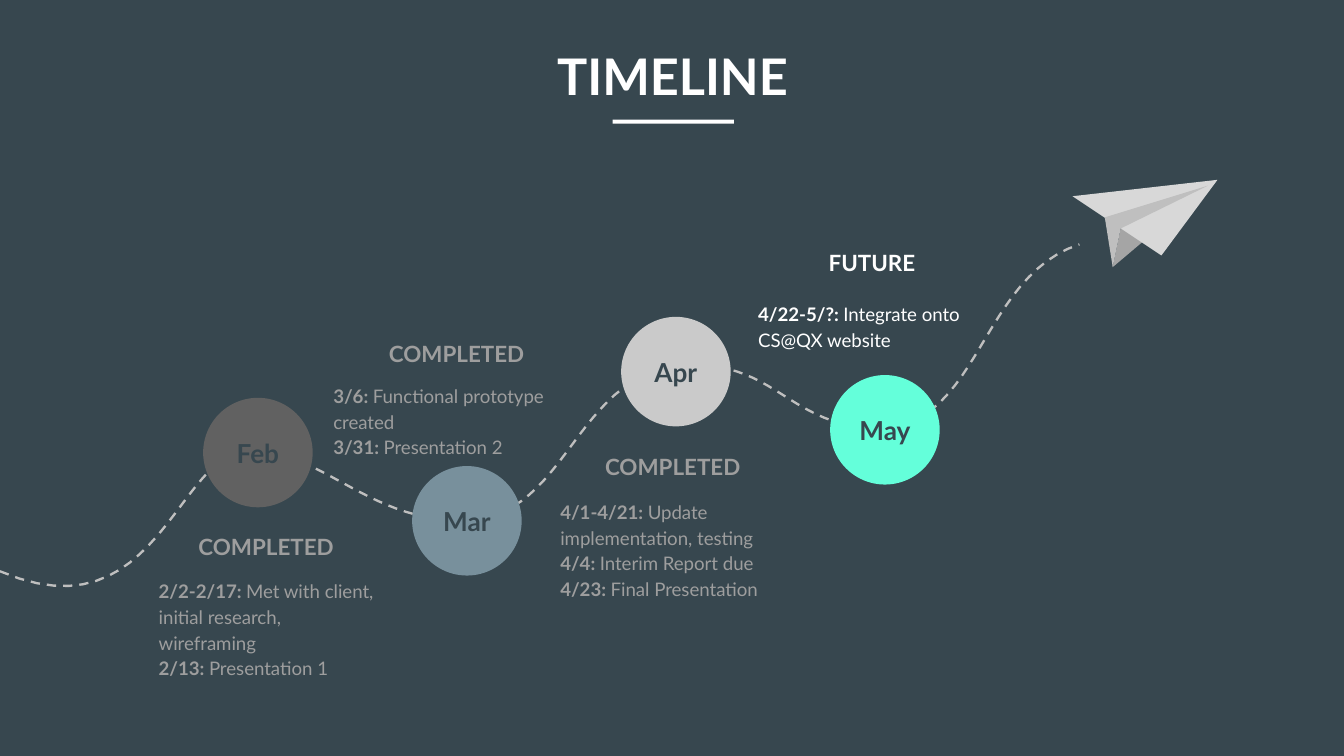
"""Build a dark timeline slide with four monthly milestones and a paper plane."""
from dataclasses import dataclass

import pptx
import pptx.dml.color
import pptx.enum.dml
import pptx.enum.shapes
import pptx.enum.text
import pptx.util

Cm = pptx.util.Cm
Point = tuple[float, float]
Box = tuple[float, float, float, float]

COLORS = {
    "background": "37474F",
    "white": "FFFFFF",
    "muted": "9E9E9E",
    "trail": "BFBFBF",
    "feb": "616161",
    "mar": "78909C",
    "apr": "CACACA",
    "may": "64FFDA",
    "keel": "A5A5A5",
    "wing": "D8D8D8",
    "fold": "BFBFBF",
}
FONT = "Lato"
DIAMETER = 2.07
FIRST_LEFT, STEP = 3.84, 3.95
LABEL_WIDTH, LABEL_HEIGHT, LABEL_DROP = 1.32, 0.69, 0.7
HEADING_HEIGHT = 0.61
CURVE_STEPS = 24
TIGHT_INSETS = (0.1, 0.05)
BODY_INSETS = (0.23, 0.1)

TRAIL_START = (0, 10.8)
TRAIL_CURVES = [
    ((3.02, 12.09), (3.33, 8.48), (4.75, 8.51)),
    ((6.17, 8.56), (7.04, 9.93), (8.89, 9.83)),
    ((10.72, 9.7), (10.87, 7.16), (12.78, 6.93)),
    ((14.68, 6.71), (14.88, 8.15), (16.69, 8.08)),
    ((18.52, 8), (18.54, 5.23), (20.4, 4.62)),
]
PLANE = {
    "keel": [(21.87, 4.34), (21.03, 5.05), (21.18, 4.32)],
    "wing": [(23.01, 3.4), (20.27, 3.71), (21.95, 4.83)],
    "fold": [(22.83, 3.51), (20.88, 4.11), (21.03, 5.05), (21.18, 4.32)],
}


@dataclass
class Milestone:
    month: str
    circle_top: float
    status: str
    heading: tuple[float, float, float]
    body: Box
    events: list[tuple[str, str]]
    text_color: str = "muted"


MILESTONES = [
    Milestone("Feb", 7.52, "COMPLETED", (3.61, 10.03, 2.84), (2.77, 10.8, 4.55, 2.26),
              [("2/2-2/17:", "Met with client, initial research, wireframing"),
               ("2/13:", "Presentation 1")]),
    Milestone("Mar", 8.81, "COMPLETED", (7.21, 6.38, 2.84), (6.07, 7.11, 5.16, 2.06),
              [("3/6:", "Functional prototype created"), ("3/31:", "Presentation 2")]),
    Milestone("Apr", 5.99, "COMPLETED", (11.18, 8.51, 3.07), (10.36, 9.3, 5.33, 2.59),
              [("4/1-4/21:", "Update implementation, testing"),
               ("4/4:", "Interim Report due"), ("4/23:", "Final Presentation")]),
    Milestone("May", 7.09, "FUTURE", (15.16, 4.65, 2.64), (14.1, 5.56, 4.78, 1.24),
              [("4/22-5/?:", "Integrate onto CS@QX website")], "white"),
]


def rgb(name: str) -> pptx.dml.color.RGBColor:
    """Return a named colour."""
    return pptx.dml.color.RGBColor.from_string(COLORS[name])


def fill_shape(shape, color: str) -> None:
    """Give a shape a plain fill without line or shadow."""
    shape.shadow.inherit = False
    shape.fill.solid()
    shape.fill.fore_color.rgb = rgb(color)
    shape.line.fill.background()


def add_filled(slide, kind, box: Box, color: str) -> None:
    """Add a plain preset shape."""
    fill_shape(slide.shapes.add_shape(kind, *map(Cm, box)), color)


def format_run(run, size: float, color: str, bold: bool = True) -> None:
    """Set the font of a run."""
    run.font.name = FONT
    run.font.size = pptx.util.Pt(size)
    run.font.bold = bold
    run.font.color.rgb = rgb(color)


def add_frame(slide, box: Box, insets: Point, middle: bool = False):
    """Add a wrapping text box and return its text frame."""
    frame = slide.shapes.add_textbox(*map(Cm, box)).text_frame
    frame.word_wrap = True
    frame.margin_left = frame.margin_right = Cm(insets[0])
    frame.margin_top = frame.margin_bottom = Cm(insets[1])
    anchors = pptx.enum.text.MSO_ANCHOR
    frame.vertical_anchor = anchors.MIDDLE if middle else anchors.TOP
    return frame


def add_centered(slide, text: str, box: Box, size: float, color: str,
                 insets: Point = TIGHT_INSETS, middle: bool = True):
    """Add one centred bold line and return its paragraph."""
    frame = add_frame(slide, box, insets, middle)
    frame.text = text
    paragraph = frame.paragraphs[0]
    paragraph.alignment = pptx.enum.text.PP_ALIGN.CENTER
    format_run(paragraph.runs[0], size, color)
    return paragraph


def add_events(slide, milestone: Milestone) -> None:
    """Add the dated events of a milestone."""
    frame = add_frame(slide, milestone.body, BODY_INSETS)
    for index, (date, event) in enumerate(milestone.events):
        paragraph = frame.add_paragraph() if index else frame.paragraphs[0]
        paragraph.text = f"{date} "
        paragraph.add_run().text = event
        paragraph.line_spacing = 1.15
        for run, bold in zip(paragraph.runs, (True, False)):
            format_run(run, 10, milestone.text_color, bold)


def add_outline(shapes, points: list[Point], close: bool):
    """Add a freeform through the given points."""
    start, *rest = [(Cm(x), Cm(y)) for x, y in points]
    builder = shapes.build_freeform(*start)
    builder.add_line_segments(rest, close=close)
    return builder.convert_to_shape()


def curve_points(start: Point, first: Point, second: Point, end: Point) -> list[Point]:
    """Return points along a cubic curve, without its start."""
    points = []
    for step in range(1, CURVE_STEPS + 1):
        t = step / CURVE_STEPS
        weights = ((1 - t) ** 3, 3 * t * (1 - t) ** 2, 3 * t * t * (1 - t), t ** 3)
        x, y = (sum(w * value for w, value in zip(weights, axis))
                for axis in zip(start, first, second, end))
        points.append((x, y))
    return points


def add_trail(slide) -> None:
    """Add the dashed flight path."""
    points = [TRAIL_START]
    for curve in TRAIL_CURVES:
        points += curve_points(points[-1], *curve)
    trail = add_outline(slide.shapes, points, close=False)
    trail.shadow.inherit = False
    trail.fill.background()
    trail.line.color.rgb = rgb("trail")
    trail.line.width = pptx.util.Pt(1.25)
    trail.line.dash_style = pptx.enum.dml.MSO_LINE.DASH


def main() -> None:
    """Build and save the slide."""
    presentation = pptx.Presentation()
    presentation.slide_width, presentation.slide_height = Cm(25.4), Cm(14.29)
    slide = presentation.slides.add_slide(presentation.slide_layouts[6])
    slide.background.fill.solid()
    slide.background.fill.fore_color.rgb = rgb("background")
    kinds = pptx.enum.shapes.MSO_SHAPE

    add_trail(slide)
    plane = slide.shapes.add_group_shape()
    for part, points in PLANE.items():
        fill_shape(add_outline(plane.shapes, points, close=True), part)

    for index, milestone in enumerate(MILESTONES):
        left, top = FIRST_LEFT + index * STEP, milestone.circle_top
        add_filled(slide, kinds.OVAL, (left, top, DIAMETER, DIAMETER), milestone.month.lower())
        label = (left + (DIAMETER - LABEL_WIDTH) / 2, top + LABEL_DROP, LABEL_WIDTH, LABEL_HEIGHT)
        add_centered(slide, milestone.month, label, 14, "background", middle=False)
        add_centered(slide, milestone.status, (*milestone.heading, HEADING_HEIGHT),
                     12, milestone.text_color)
        add_events(slide, milestone)

    add_filled(slide, kinds.RECTANGLE, (11.58, 2.26, 2.29, 0.08), "white")
    title = add_centered(slide, "TIMELINE", (7.59, 0.91, 10.24, 0.99), 27, "white", (0, 0))
    title.line_spacing = 1.03
    presentation.save("out.pptx")


if __name__ == "__main__":
    main()
